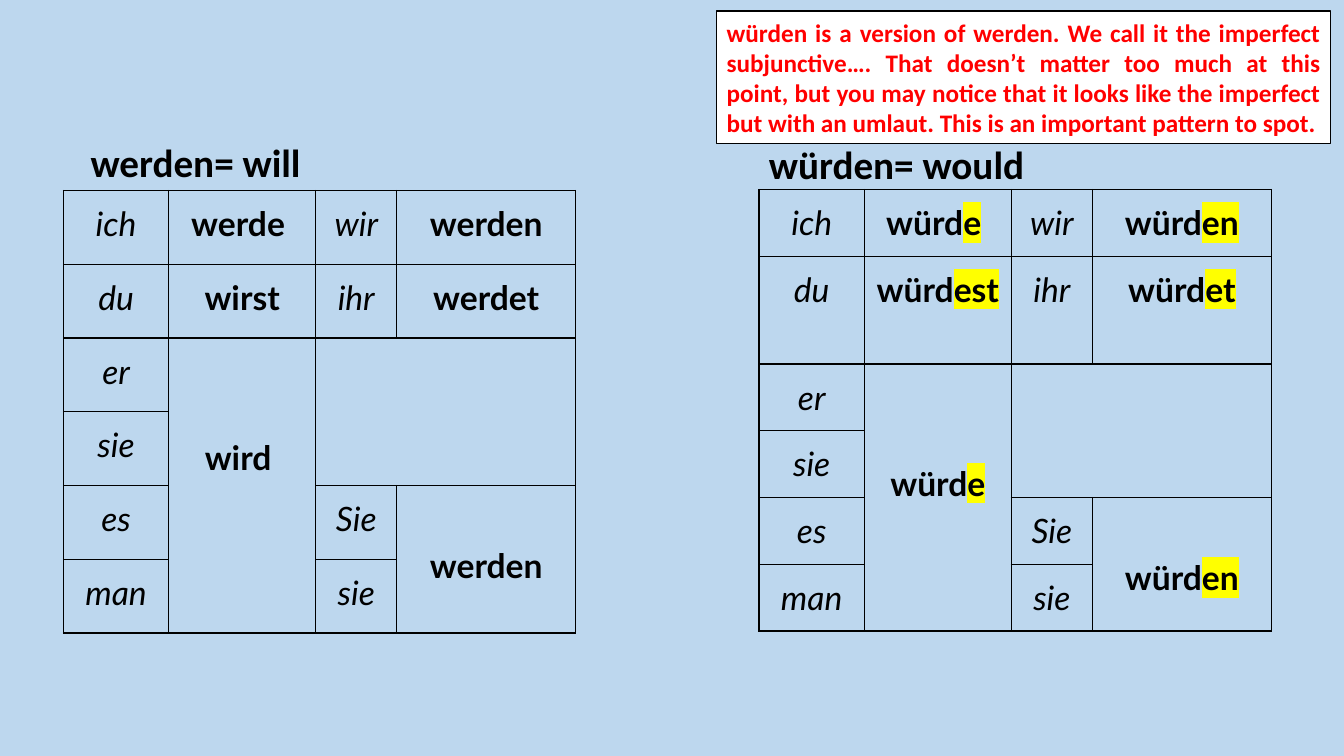
from dataclasses import dataclass

from lxml import etree
from pptx import Presentation
from pptx.dml.color import RGBColor
from pptx.enum.shapes import MSO_SHAPE
from pptx.enum.text import MSO_AUTO_SIZE, PP_ALIGN
from pptx.oxml.ns import qn
from pptx.util import Pt

RECTANGLE = MSO_SHAPE.RECTANGLE
FIT_SHAPE = MSO_AUTO_SIZE.SHAPE_TO_FIT_TEXT
LEFT, CENTER, JUSTIFY = PP_ALIGN.LEFT, PP_ALIGN.CENTER, PP_ALIGN.JUSTIFY


@dataclass(frozen=True)
class Theme:
    background: str = "BDD7EE"
    ink: str = "000000"
    paper: str = "FFFFFF"
    note: str = "FF0000"
    highlight: str = "FFFF00"
    table_font: str = "Lato"
    text_font: str = "Calibri"
    table_size: float = 24
    heading_size: float = 28
    note_size: float = 18
    line_width: float = 1
    cell_margin: float = 5


@dataclass(frozen=True)
class Slot:
    """A place in the grid; drop lowers its text inside a merged cell."""
    row: int
    column: int
    rows: int = 1
    columns: int = 1
    drop: float = 0


@dataclass(frozen=True)
class Verb:
    stem: str
    ending: str = ""
    tail: str = ""


@dataclass(frozen=True)
class Conjugation:
    heading: str
    heading_left: float
    heading_top: float
    left: float
    top: float
    row_heights: tuple[float, ...]
    verbs: tuple[Verb, ...]


THEME = Theme()
COLUMN_WIDTHS = (75.2, 105, 58, 127.7)
PRONOUN_COLUMNS = {
    0: ("ich", "du", "er", "sie", "es", "man"),
    2: ("wir", "ihr", "", "", "Sie", "sie"),
}
EMPTY_SLOT = Slot(2, 2, rows=2, columns=2)
# ich, wir, du, ihr, third person singular, third person plural
VERB_SLOTS = (
    Slot(0, 1), Slot(0, 3), Slot(1, 1), Slot(1, 3),
    Slot(2, 1, rows=4, drop=61.4), Slot(4, 3, rows=2, drop=33.6),
)
CONJUGATIONS = (
    Conjugation(
        "werden= will", 57.6, 95, 45.3, 136, (52.7,) * 6,
        (Verb("werde", tail=" "), Verb("werden"), Verb("wirst"),
         Verb("werdet"), Verb("wird", tail=" "), Verb("werden")),
    ),
    Conjugation(
        "würden= would", 542.2, 96.5, 542.2, 135.3, (47.7, 77) + (47.7,) * 4,
        (Verb("würd", "e", " "), Verb("würd", "en"), Verb("würd", "est"),
         Verb("würd", "et"), Verb("würd", "e"), Verb("würd", "en")),
    ),
)
NOTE = (
    "würden is a version of werden. We call it the imperfect subjunctive…. "
    "That doesn’t matter too much at this point, but you may notice that it "
    "looks like the imperfect but with an umlaut. This is an important "
    "pattern to spot."
)


def add_text(paragraph, text: str, *, font: str, size: float,
             color: str = THEME.ink, bold: bool = False, italic: bool = False,
             align=LEFT, highlight: str = "") -> None:
    paragraph.alignment = align
    run = paragraph.add_run()
    run.text = text
    run.font.size = Pt(size)
    run.font.bold = bold
    run.font.italic = italic
    run.font.color.rgb = RGBColor.from_string(color)
    if highlight:
        marker = etree.SubElement(run.font._element, qn("a:highlight"))
        etree.SubElement(marker, qn("a:srgbClr"), val=highlight)
    run.font.name = font


def style_cell(cell) -> None:
    """Give a cell thin borders, narrow margins and no fill."""
    properties = cell._tc.get_or_add_tcPr()
    for side in ("lnL", "lnR", "lnT", "lnB"):
        border = etree.SubElement(properties, qn(f"a:{side}"),
                                  w=str(Pt(THEME.line_width)))
        fill = etree.SubElement(border, qn("a:solidFill"))
        etree.SubElement(fill, qn("a:srgbClr"), val=THEME.ink)
    cell.fill.background()
    margin = Pt(THEME.cell_margin)
    cell.margin_left = cell.margin_right = margin
    cell.margin_top = cell.margin_bottom = margin


def write_cell(cell, text: str, **text_format) -> None:
    paragraph = cell.text_frame.paragraphs[0]
    paragraph.line_spacing = 1.15
    add_text(paragraph, text, font=THEME.table_font, size=THEME.table_size,
             align=CENTER, **text_format)


def merge_slot(table, slot: Slot) -> None:
    if slot.rows > 1 or slot.columns > 1:
        last = table.cell(slot.row + slot.rows - 1,
                          slot.column + slot.columns - 1)
        table.cell(slot.row, slot.column).merge(last)


def add_conjugation(slide, conjugation: Conjugation) -> None:
    heights = conjugation.row_heights
    table = slide.shapes.add_table(
        len(heights), len(COLUMN_WIDTHS),
        Pt(conjugation.left), Pt(conjugation.top),
        Pt(sum(COLUMN_WIDTHS)), Pt(sum(heights)),
    ).table
    table.first_row = table.horz_banding = False
    for column, width in zip(table.columns, COLUMN_WIDTHS):
        column.width = Pt(width)
    for row, height in zip(table.rows, heights):
        row.height = Pt(height)
        for cell in row.cells:
            style_cell(cell)

    merge_slot(table, EMPTY_SLOT)
    for column_index, pronouns in PRONOUN_COLUMNS.items():
        for row_index, pronoun in enumerate(pronouns):
            if pronoun:
                write_cell(table.cell(row_index, column_index), pronoun,
                           italic=True)
    for slot, verb in zip(VERB_SLOTS, conjugation.verbs):
        merge_slot(table, slot)
        cell = table.cell(slot.row, slot.column)
        cell.margin_top = Pt(THEME.cell_margin + slot.drop)
        write_cell(cell, verb.stem, bold=True)
        if verb.ending:
            write_cell(cell, verb.ending, bold=True, highlight=THEME.highlight)
        if verb.tail:
            write_cell(cell, verb.tail, bold=True)


def add_heading(slide, conjugation: Conjugation) -> None:
    box = slide.shapes.add_textbox(
        Pt(conjugation.heading_left), Pt(conjugation.heading_top),
        Pt(366), Pt(41))
    frame = box.text_frame
    frame.word_wrap = True
    frame.auto_size = FIT_SHAPE
    add_text(frame.paragraphs[0], conjugation.heading, font=THEME.text_font,
             size=THEME.heading_size, bold=True)


def add_note(slide) -> None:
    shape = slide.shapes.add_shape(RECTANGLE, Pt(512), Pt(8),
                                   Pt(438.5), Pt(94.5))
    shape.shadow.inherit = False
    shape.fill.solid()
    shape.fill.fore_color.rgb = RGBColor.from_string(THEME.paper)
    shape.line.color.rgb = RGBColor.from_string(THEME.ink)
    shape.line.width = Pt(THEME.line_width)
    frame = shape.text_frame
    frame.word_wrap = True
    frame.auto_size = FIT_SHAPE
    add_text(frame.paragraphs[0], NOTE, font=THEME.text_font,
             size=THEME.note_size, color=THEME.note, bold=True, align=JUSTIFY)


def main() -> None:
    presentation = Presentation()
    presentation.slide_width, presentation.slide_height = Pt(960), Pt(540)
    slide = presentation.slides.add_slide(presentation.slide_layouts[6])
    slide.background.fill.solid()
    slide.background.fill.fore_color.rgb = RGBColor.from_string(THEME.background)
    for conjugation in CONJUGATIONS:
        add_conjugation(slide, conjugation)
        add_heading(slide, conjugation)
    add_note(slide)
    presentation.save("out.pptx")


if __name__ == "__main__":
    main()
